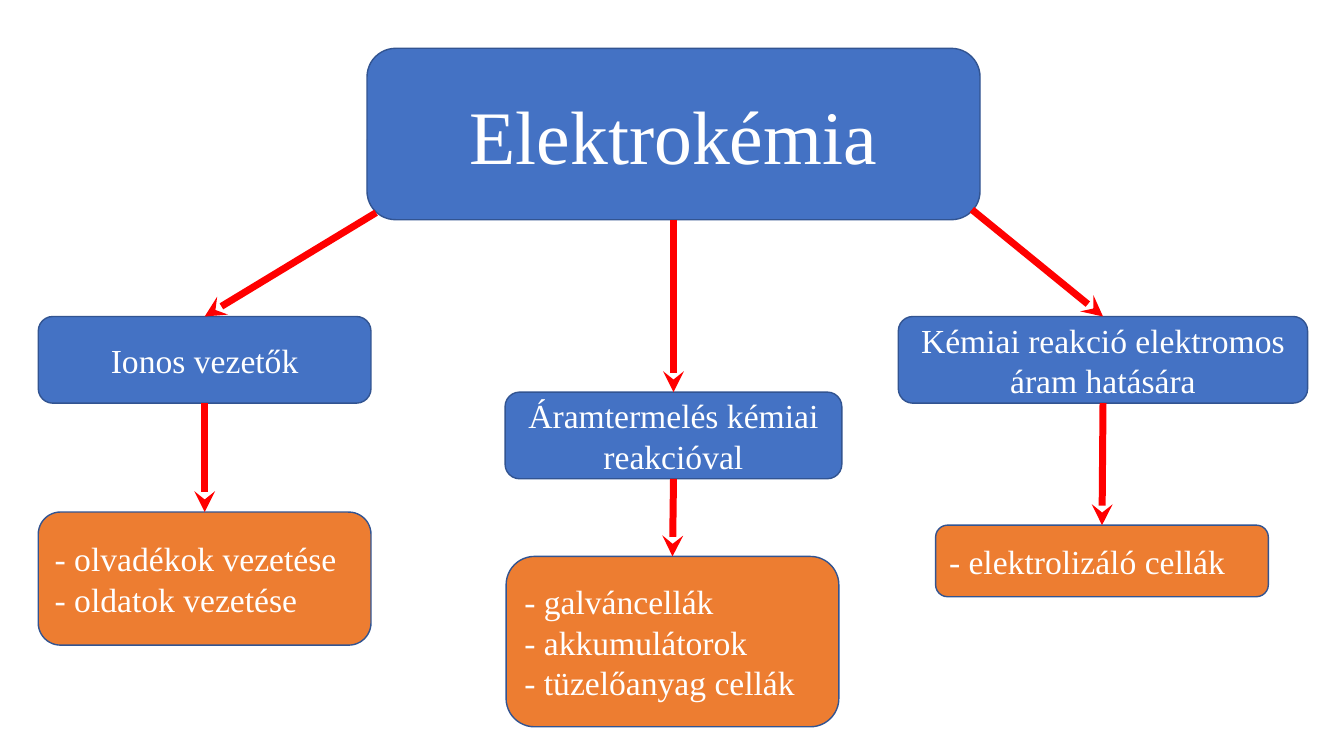
from dataclasses import dataclass
from typing import Optional

from lxml import etree
from pptx import Presentation
from pptx import util as u
from pptx.dml.color import RGBColor
from pptx.enum import shapes, text
from pptx.oxml import ns

COLOURS = {
    "topic": "4472C4",
    "examples": "ED7D31",
    "outline": "325491",
    "arrow": "FF0000",
    "text": "FFFFFF",
}
TOP, BOTTOM = 0, 2


@dataclass(frozen=True)
class Box:
    left: float
    top: float
    width: float
    height: float
    lines: tuple[str, ...]
    fill: str = "topic"
    size: int = 24


@dataclass(frozen=True)
class Arrow:
    source: str
    target: str
    start: Optional[tuple[float, float]] = None


BOXES = {
    "title": Box(3.64, 0.48, 6.08, 1.7, ("Elektrokémia",), size=54),
    "conductors": Box(0.38, 3.14, 3.3, 0.86, ("Ionos vezetők",)),
    "generation": Box(5.01, 3.89, 3.34, 0.86, ("Áramtermelés kémiai reakcióval",)),
    "reaction": Box(8.91, 3.14, 4.06, 0.86, ("Kémiai reakció elektromos áram hatására",)),
    "conduction": Box(0.38, 5.08, 3.3, 1.32,
                      ("- olvadékok vezetése", "- oldatok vezetése"), "examples"),
    "cells": Box(5.02, 5.52, 3.3, 1.69,
                 ("- galváncellák", "- akkumulátorok", "- tüzelőanyag cellák"), "examples"),
    "electrolysis": Box(9.28, 5.21, 3.3, 0.71, ("- elektrolizáló cellák",), "examples"),
}
ARROWS = (
    Arrow("title", "conductors", (3.73, 2.11)),
    Arrow("title", "generation"),
    Arrow("title", "reaction", (9.64, 2.08)),
    Arrow("conductors", "conduction"),
    Arrow("generation", "cells"),
    Arrow("reaction", "electrolysis"),
)


def colour(name: str) -> RGBColor:
    return RGBColor.from_string(COLOURS[name])


def apply_format(target, values: dict) -> None:
    for name, value in values.items():
        setattr(target, name, value)


def draw_box(page, box: Box):
    shape = page.shapes.add_shape(
        shapes.MSO_SHAPE.ROUNDED_RECTANGLE,
        *(u.Inches(length) for length in (box.left, box.top, box.width, box.height)))
    shape.shadow.inherit = False
    shape.fill.solid()
    shape.fill.fore_color.rgb = colour(box.fill)
    shape.line.color.rgb = colour("outline")
    shape.line.width = u.Pt(1)
    frame = shape.text_frame
    apply_format(frame, {"word_wrap": True, "vertical_anchor": text.MSO_ANCHOR.MIDDLE})
    align = text.PP_ALIGN.CENTER if box.fill == "topic" else text.PP_ALIGN.LEFT
    for index, line in enumerate(box.lines):
        para = frame.add_paragraph() if index else frame.paragraphs[0]
        para.alignment = align
        span = para.add_run()
        span.text = line
        apply_format(span.font, {"name": "Times New Roman", "size": u.Pt(box.size)})
        span.font.color.rgb = colour("text")
    return shape


def draw_arrow(page, arrow: Arrow, drawn: dict) -> None:
    x, y = arrow.start or (0, 0)
    connector = page.shapes.add_connector(
        shapes.MSO_CONNECTOR.STRAIGHT, u.Inches(x), u.Inches(y), u.Inches(x), u.Inches(y))
    if arrow.start is None:
        connector.begin_connect(drawn[arrow.source], BOTTOM)
    connector.end_connect(drawn[arrow.target], TOP)
    connector.line.color.rgb = colour("arrow")
    connector.line.width = u.Pt(5)
    etree.SubElement(connector.line._get_or_add_ln(), ns.qn("a:tailEnd"), type="stealth")
    etree.SubElement(connector._element.spPr, ns.qn("a:effectLst"))


def main() -> None:
    deck = Presentation()
    apply_format(deck, {"slide_width": u.Inches(13.33), "slide_height": u.Inches(7.5)})
    page = deck.slides.add_slide(deck.slide_layouts[6])
    drawn = {name: draw_box(page, box) for name, box in BOXES.items()}
    for arrow in ARROWS:
        draw_arrow(page, arrow, drawn)
    deck.save("out.pptx")


if __name__ == "__main__":
    main()
